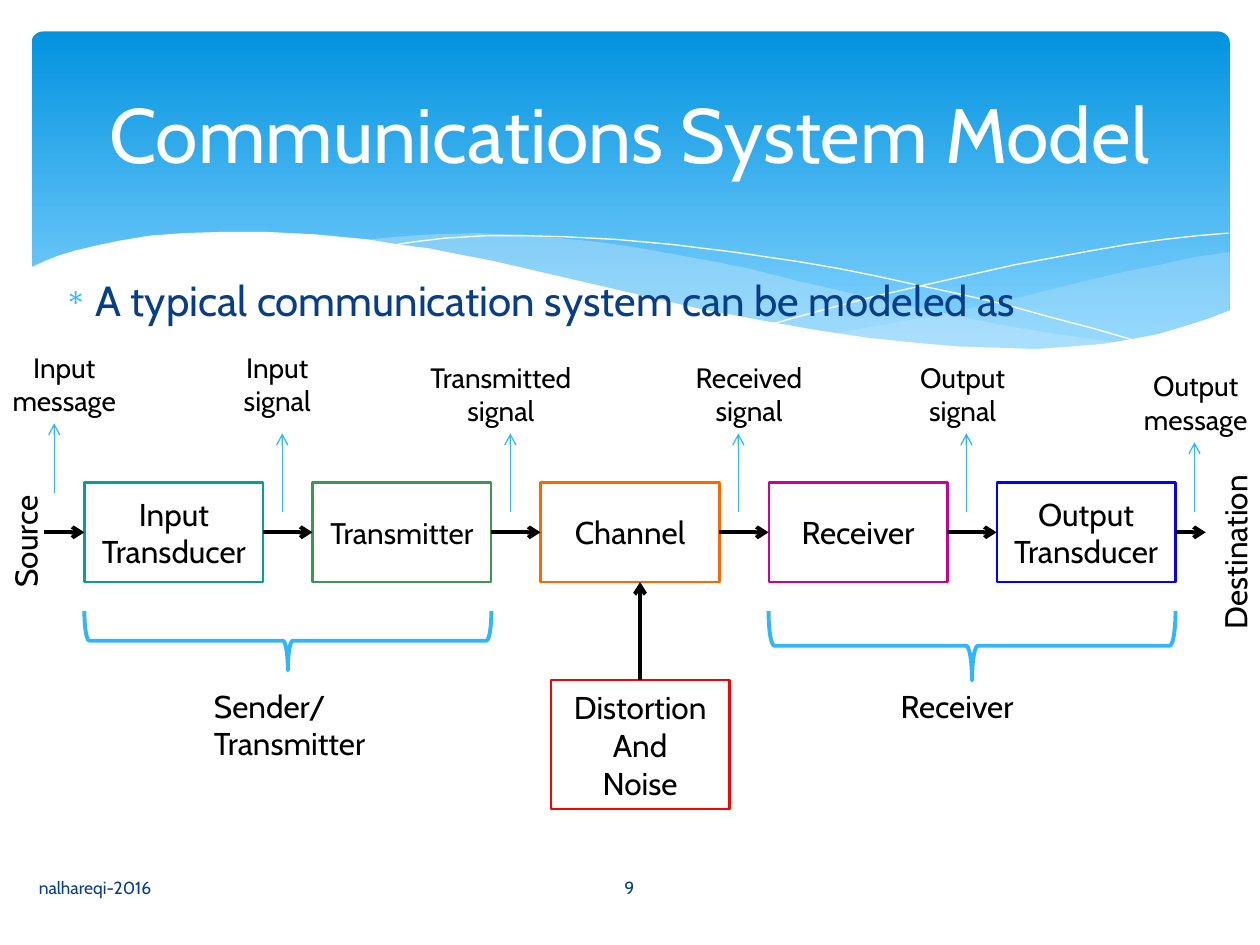
"""Build a slide that shows the block model of a communications system."""
import pptx
import pptx.dml.color
import pptx.enum.dml
import pptx.enum.shapes
import pptx.enum.text
import pptx.oxml
import pptx.oxml.ns
import pptx.util
from lxml import etree

Inches = pptx.util.Inches
Pt = pptx.util.Pt
Shape = pptx.enum.shapes.MSO_SHAPE
Align = pptx.enum.text.PP_ALIGN
Anchor = pptx.enum.text.MSO_ANCHOR

FONT = "Cabin"
COLORS = {
    "white": "FFFFFF", "black": "000000", "navy": "073E87", "sky": "31B6FD",
    "banner_top": "0293E0", "banner_bottom": "83D3FE", "wave": "C6E7FC",
    "teal": "049E9B", "green": "3D9653", "orange": "FF6600",
    "magenta": "CC0099", "blue": "0000FF", "red": "FF0000",
}
BOX_LEFT, BOX_TOP, BOX_WIDTH, BOX_HEIGHT, BOX_STEP = 0.67, 3.83, 1.42, 0.79, 1.81
ROW_MIDDLE = BOX_TOP + BOX_HEIGHT / 2

RIGHT_WAVE = [
    (9.76, 2), (9.48, 2.04), (9.21, 2.1), (8.91, 2.16), (8.61, 2.23), (8.05, 2.37),
    (7.53, 2.48), (7.06, 2.57), (6.61, 2.65), (6.91, 2.69), (7.19, 2.72), (7.45, 2.75),
    (7.69, 2.77), (8.03, 2.78), (8.35, 2.77), (8.63, 2.75), (8.89, 2.72), (9.13, 2.67),
    (9.35, 2.62), (9.49, 2.57), (9.63, 2.52), (9.76, 2.47),
]
LONG_WAVE = [
    (8.93, 2.73), (8.66, 2.69), (8.37, 2.65), (8.07, 2.6), (7.75, 2.54), (7.41, 2.47),
    (7.06, 2.4), (6.68, 2.31), (6.29, 2.22), (5.98, 2.14), (5.69, 2.08), (5.41, 2.03),
    (5.14, 1.98), (4.89, 1.94), (4.65, 1.91), (4.42, 1.89), (4.2, 1.87), (3.8, 1.85),
    (3.44, 1.86), (3.13, 1.88), (2.86, 1.91), (3.23, 1.96), (3.62, 2.03), (4.04, 2.11),
    (4.49, 2.22), (4.91, 2.32), (5.3, 2.4), (5.66, 2.48), (6.01, 2.55), (6.34, 2.61),
    (6.65, 2.66), (6.95, 2.7), (7.22, 2.74), (7.48, 2.76), (7.73, 2.77), (7.96, 2.78),
    (8.28, 2.78), (8.57, 2.77), (8.76, 2.75),
]
FALLING_LINE = [
    (3.09, 1.95), (3.28, 1.92), (3.53, 1.89), (3.87, 1.87), (4.16, 1.87), (4.5, 1.88),
    (4.89, 1.9), (5.33, 1.94), (5.82, 2), (6.36, 2.08), (6.65, 2.13), (6.95, 2.19),
    (7.27, 2.26), (7.6, 2.33), (7.95, 2.41), (8.31, 2.51), (8.69, 2.61), (9.07, 2.72),
]
RISING_LINE = [
    (6.13, 2.57), (6.53, 2.46), (6.95, 2.35), (7.48, 2.23), (8.06, 2.1), (8.66, 1.99),
    (8.95, 1.94), (9.24, 1.9), (9.51, 1.87), (9.75, 1.85),
]
BANNER_EDGE = [
    (9.77, 2.46), (9.59, 2.53), (9.4, 2.59), (9.2, 2.65), (8.99, 2.69), (8.75, 2.73),
    (8.5, 2.75), (8.23, 2.77), (7.93, 2.76), (7.61, 2.75), (7.26, 2.72), (6.88, 2.68),
    (6.48, 2.62), (6.03, 2.54), (5.55, 2.45), (5.03, 2.33), (4.47, 2.2), (3.91, 2.07),
    (3.65, 2.02), (3.4, 1.97), (3.16, 1.94), (2.92, 1.9), (2.5, 1.86), (2.11, 1.84),
    (1.77, 1.84), (1.46, 1.85), (1.19, 1.87), (0.95, 1.91), (0.76, 1.95), (0.59, 1.99),
    (0.46, 2.03), (0.36, 2.07), (0.23, 2.13), (0.23, 3.29), (9.77, 3.29),
]


def rgb(name):
    """Return the named colour."""
    return pptx.dml.color.RGBColor.from_string(COLORS[name])


def write(shape, text, size, color="black", align=Align.CENTER, anchor=Anchor.MIDDLE, margin=0.1):
    """Put formatted text into a shape."""
    frame = shape.text_frame
    frame.word_wrap = True
    frame.vertical_anchor = anchor
    frame.margin_left = frame.margin_right = Inches(margin)
    frame.text = text
    for paragraph in frame.paragraphs:
        paragraph.alignment = align
        for run in paragraph.runs:
            run.font.name = FONT
            run.font.size = Pt(size)
            run.font.color.rgb = rgb(color)


def add_text(slide, bounds, text, size, rotation=0, **style):
    """Add a text box and return it."""
    box = slide.shapes.add_textbox(*map(Inches, bounds))
    box.rotation = rotation
    write(box, text, size, **style)
    return box


def add_bullet(slide, bounds, text):
    """Add a bulleted line of text."""
    box = add_text(slide, bounds, text, 24, color="navy", align=Align.LEFT, anchor=Anchor.TOP)
    properties = box.text_frame.paragraphs[0]._p.get_or_add_pPr()
    properties.set("marL", str(Inches(0.33)))
    properties.set("indent", str(-Inches(0.24)))
    color = etree.SubElement(properties, pptx.oxml.ns.qn("a:buClr"))
    etree.SubElement(color, pptx.oxml.ns.qn("a:srgbClr"), val=COLORS["sky"])
    etree.SubElement(properties, pptx.oxml.ns.qn("a:buSzPct"), val="70000")
    etree.SubElement(properties, pptx.oxml.ns.qn("a:buChar"), char="∗")


def add_banner(slide):
    """Add the rounded gradient banner."""
    banner = slide.shapes.add_shape(
        Shape.ROUNDED_RECTANGLE, Inches(0.25), Inches(0.25), Inches(9.51), Inches(2.7))
    banner.adjustments[0] = 0.034
    banner.shadow.inherit = False
    banner.line.fill.background()
    banner.fill.gradient()
    banner.fill.gradient_angle = 270
    stops = zip(banner.fill.gradient_stops, (0, 0.9), ("banner_top", "banner_bottom"))
    for stop, position, color in stops:
        stop.position = position
        stop.color.rgb = rgb(color)


def add_outline(slide, points, fill=None, opacity=100):
    """Add a filled wave, or a thin white curve when there is no fill."""
    start, *others = [(Inches(x), Inches(y)) for x, y in points]
    builder = slide.shapes.build_freeform(*start)
    builder.add_line_segments(others, close=fill is not None)
    shape = builder.convert_to_shape()
    shape.shadow.inherit = False
    if fill is None:
        shape.fill.background()
        shape.line.color.rgb = rgb("white")
        shape.line.width = Pt(0)
        return
    shape.line.fill.background()
    shape.fill.solid()
    shape.fill.fore_color.rgb = rgb(fill)
    if opacity < 100:
        color = shape._element.spPr.find(".//" + pptx.oxml.ns.qn("a:srgbClr"))
        etree.SubElement(color, pptx.oxml.ns.qn("a:alpha"), val=str(opacity * 1000))


def add_block(slide, bounds, text, color, size=18):
    """Add an outlined block of the diagram and return it."""
    block = slide.shapes.add_shape(Shape.RECTANGLE, *map(Inches, bounds))
    block.shadow.inherit = False
    block.fill.solid()
    block.fill.fore_color.rgb = rgb("white")
    block.line.color.rgb = rgb(color)
    block.line.width = Pt(1.25)
    write(block, text, size)
    return block


def add_arrow(slide, start, end, color="black", width=2.25, source=None, target=None):
    """Add an arrow; source and target are (shape, side) pairs to join."""
    arrow = slide.shapes.add_connector(
        pptx.enum.shapes.MSO_CONNECTOR.STRAIGHT, *map(Inches, start + end))
    if source:
        arrow.begin_connect(*source)
    if target:
        arrow.end_connect(*target)
    arrow.line.color.rgb = rgb(color)
    arrow.line.width = Pt(width)
    line = arrow.line._get_or_add_ln()
    etree.SubElement(line, pptx.oxml.ns.qn("a:tailEnd"), type="arrow")
    etree.SubElement(arrow._element.spPr, pptx.oxml.ns.qn("a:effectLst"))


def add_brace(slide, bounds):
    """Add a brace that points down."""
    brace = slide.shapes.add_shape(Shape.LEFT_BRACE, *map(Inches, bounds))
    brace.rotation = 270
    brace.shadow.inherit = False
    brace.fill.background()
    brace.line.color.rgb = rgb("sky")
    brace.line.width = Pt(2.25)


def add_chain(slide):
    """Add the row of blocks, the noise block and the arrows between them."""
    stages = [("Input\nTransducer", "teal", 18), ("Transmitter", "green", 17),
              ("Channel", "orange", 18), ("Receiver", "magenta", 18),
              ("Output\nTransducer", "blue", 18)]
    blocks = [
        add_block(slide, (BOX_LEFT + BOX_STEP * index, BOX_TOP, BOX_WIDTH, BOX_HEIGHT), *stage)
        for index, stage in enumerate(stages)]
    noise = add_block(slide, (4.37, 5.4, BOX_WIDTH, 1.02), "Distortion\nAnd\nNoise", "red")
    for left, right in zip(blocks, blocks[1:]):
        add_arrow(slide, (0, 0), (0, 0), source=(left, 3), target=(right, 1))
    add_arrow(slide, (9.33, ROW_MIDDLE), (9.57, ROW_MIDDLE), source=(blocks[-1], 3))
    add_arrow(slide, (0.35, ROW_MIDDLE), (BOX_LEFT, ROW_MIDDLE), target=(blocks[0], 1))
    add_arrow(slide, (5.08, 5.4), (5.08, BOX_TOP + BOX_HEIGHT), source=(noise, 0))


def add_signals(slide):
    """Add the signal names and the thin arrows that lead to them."""
    signals = [("Input\nmessage", 0, 2.73, 1.02, 3.91, 3.36),
               ("Input\nsignal", 1.69, 2.73, 1.02, 4.06, 3.44),
               ("Transmitted\nsignal", 3.19, 2.81, 1.57, 4.06, 3.44),
               ("Received\nsignal", 5.16, 2.81, 1.57, 4.06, 3.44),
               ("Output\nsignal", 7.13, 2.81, 1.02, 4.06, 3.44),
               ("Output\nmessage", 8.98, 2.88, 1.02, 4.06, 3.51)]
    for index, (name, left, top, width, start, end) in enumerate(signals):
        x = 0.43 + BOX_STEP * index
        add_arrow(slide, (x, start), (x, end), "sky", 0.75)
        add_text(slide, (left, top, width, 0.64), name, 16, anchor=Anchor.TOP, margin=0.05)


def main():
    """Build and save the slide."""
    presentation = pptx.Presentation()
    presentation.slide_width, presentation.slide_height = Inches(10), Inches(7.5)
    slide = presentation.slides.add_slide(presentation.slide_layouts[6])
    add_banner(slide)
    add_outline(slide, RIGHT_WAVE, "wave", 29)
    add_outline(slide, LONG_WAVE, "wave", 40)
    add_outline(slide, FALLING_LINE)
    add_outline(slide, RISING_LINE)
    add_outline(slide, BANNER_EDGE, "white")
    add_bullet(slide, (0.33, 2.13, 9.5, 4.57), "A typical communication system can be modeled as")
    add_text(slide, (0.21, 6.84, 4.14, 0.4), "nalhareqi-2016", 10, color="navy", align=Align.LEFT)
    add_text(slide, (4.36, 6.84, 1.27, 0.4), "9", 10, color="navy")
    add_text(slide, (0.5, 0.37, 9, 1.37), "Communications System Model", 44, color="white")
    add_chain(slide)
    add_signals(slide)
    add_brace(slide, (2.05, 3.47, 0.47, 3.23))
    add_brace(slide, (7.44, 3.51, 0.55, 3.23))
    labels = [("Source", (-0.55, 3.81, 1.5, 0.4), 270),
              ("Destination", (9.05, 4.14, 1.5, 0.4), 270),
              ("Sender/ Transmitter", (1.6, 5.4, 1.73, 0.71), 0),
              ("Receiver", (7.05, 5.4, 1.73, 0.4), 0)]
    for text, bounds, rotation in labels:
        add_text(slide, bounds, text, 18, rotation, align=Align.LEFT, anchor=Anchor.TOP)
    presentation.save("out.pptx")


if __name__ == "__main__":
    main()
